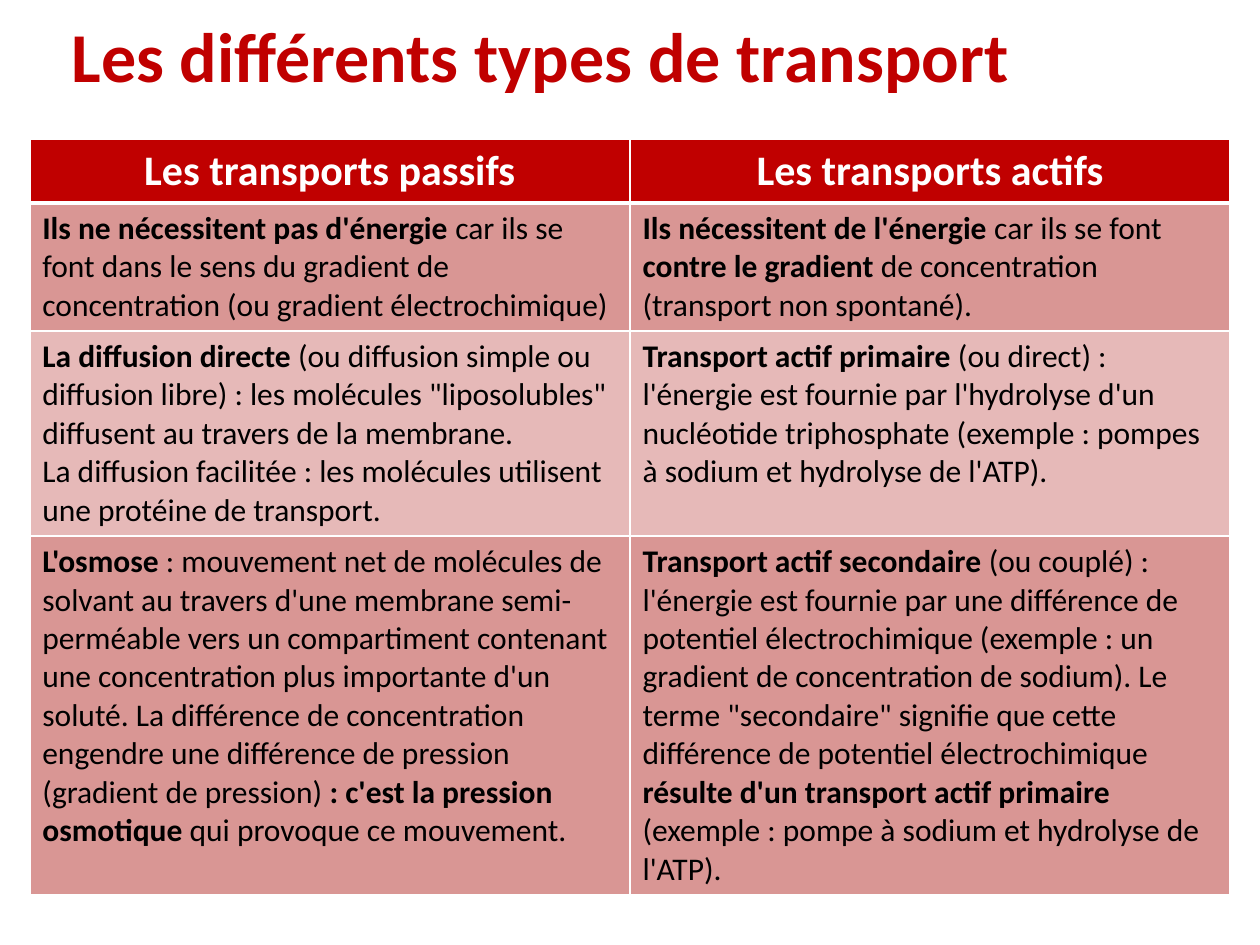
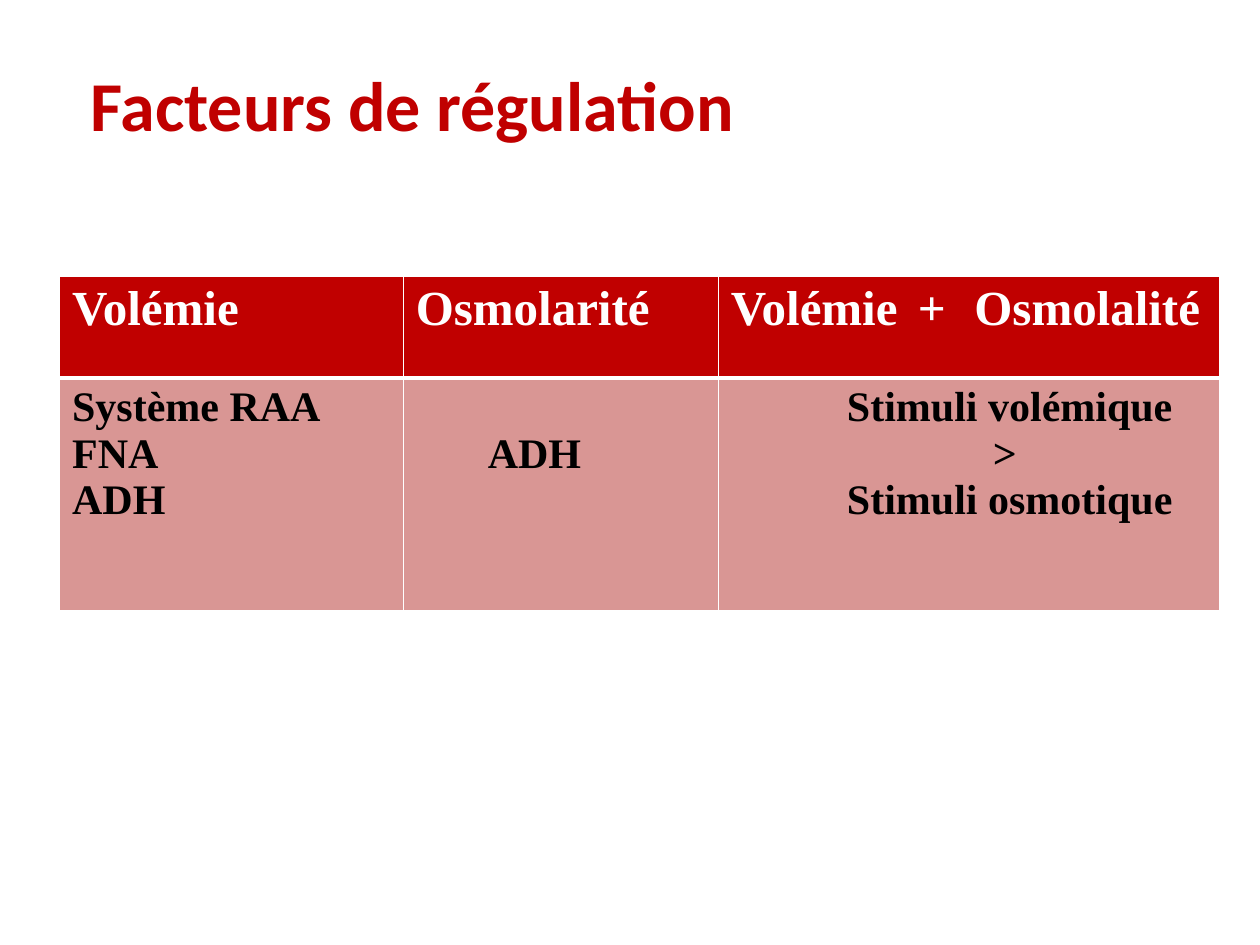
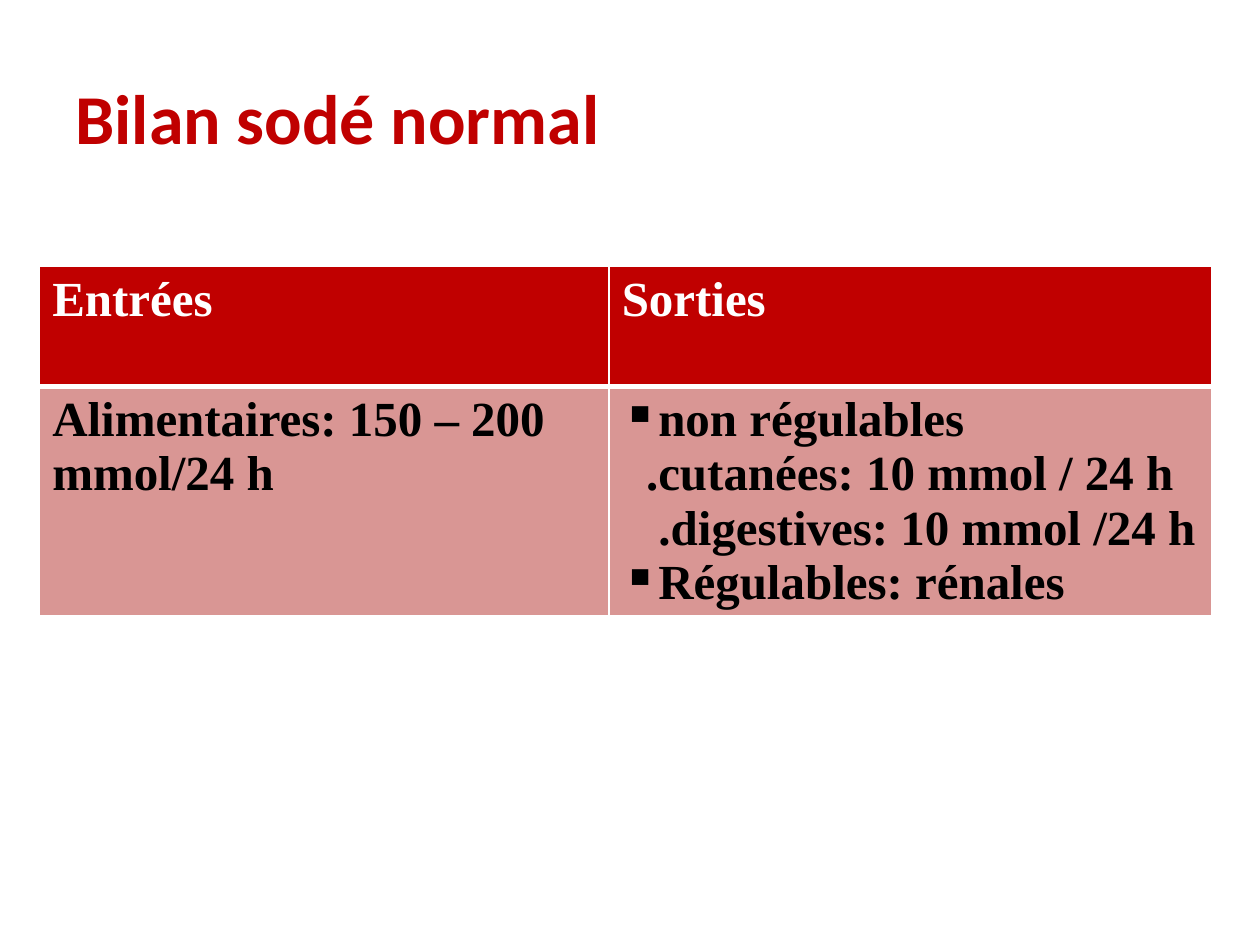
import pptx
import pptx.util
import pptx.dml.color
import pptx.enum.text
import pptx.oxml.ns
import lxml.etree

Cm = pptx.util.Cm
Pt = pptx.util.Pt
COLOURS = {"red": "C00000", "dark band": "D99694", "light band": "E6B9B8",
           "white": "FFFFFF", "black": "000000"}


def write(para, text, font="Calibri", size=18, colour="black", bold=False, indent=0, bullet=None):
    """Write text into a paragraph; parts between asterisks are bold."""
    for index, part in enumerate(text.split("*")):
        if part:
            span = para.add_run()
            span.text = part
            span.font.name = font
            span.font.size = Pt(size)
            span.font.bold = bold or index % 2 == 1
            span.font.color.rgb = pptx.dml.color.RGBColor.from_string(COLOURS[colour])
            if part == " + ":
                span.font._element.set("spc", "467")
    properties = para._p.get_or_add_pPr()
    properties.set("marL", str(Cm(indent)))
    properties.set("indent", str(-Cm(indent) if bullet else 0))
    if bullet:
        mark = lxml.etree.SubElement(properties, pptx.oxml.ns.qn("a:buChar"))
        mark.set("char", bullet)


def draw_borders(cell, row):
    """White cell borders, heavier between the header and the body."""
    properties = cell._tc.get_or_add_tcPr()
    widths = {"lnL": 1, "lnR": 1, "lnT": 3 if row == 1 else 1, "lnB": 3 if row == 0 else 1}
    for position, (side, width) in enumerate(widths.items()):
        line = lxml.etree.Element(pptx.oxml.ns.qn("a:" + side), w=str(Pt(width)))
        fill = lxml.etree.SubElement(line, pptx.oxml.ns.qn("a:solidFill"))
        lxml.etree.SubElement(fill, pptx.oxml.ns.qn("a:srgbClr"), val=COLOURS["white"])
        properties.insert(position, line)


# Content: a cell is a list of lines, a line is (text, format)
plain = {}
pages = [
    {
        "title": "Les différents types de transport",
        "title box": (1.19, 0, 22.86, 2.21),
        "table at": (0.6, 2.8),
        "columns": [12.1, 12.1],
        "rows": [1.25, 2.58, 4.13, 7.21],
        "header": {"size": 24},
        "header alignment": pptx.enum.text.PP_ALIGN.CENTER,
        "body": {"size": 18},
        "cells": [
            [[("Les transports passifs", plain)], [("Les transports actifs", plain)]],
            [[("*Ils ne nécessitent pas d'énergie *car ils se font dans le sens du gradient "
               "de concentration (ou gradient électrochimique)", plain)],
             [("*Ils nécessitent de l'énergie *car ils se font *contre le gradient *"
               "de concentration (transport non spontané).", plain)]],
            [[("*La diffusion directe *(ou diffusion simple ou diffusion libre) : les molécules "
               "\"liposolubles\" diffusent au travers de la membrane.", plain),
              ("La diffusion facilitée : les molécules utilisent une protéine de transport.", plain)],
             [("*Transport actif primaire *(ou direct) : l'énergie est fournie par l'hydrolyse "
               "d'un nucléotide triphosphate (exemple : pompes à sodium et hydrolyse de l'ATP).", plain)]],
            [[("*L'osmose *: mouvement net de molécules de solvant au travers d'une membrane "
               "semi-perméable vers un compartiment contenant une concentration plus importante "
               "d'un soluté. La différence de concentration engendre une différence de pression "
               "(gradient de pression) *: c'est la pression osmotique* qui provoque ce mouvement.", plain)],
             [("*Transport actif secondaire *(ou couplé) : l'énergie est fournie par une différence "
               "de potentiel électrochimique (exemple : un gradient de concentration de sodium). "
               "Le terme \"secondaire\" signifie que cette différence de potentiel électrochimique "
               "*résulte d'un transport actif primaire *(exemple : pompe à sodium et hydrolyse "
               "de l'ATP).", plain)]],
        ],
    },
    {
        "title": "Facteurs de régulation",
        "title box": (1.57, 0.79, 22.86, 2.59),
        "table at": (1.2, 5.56),
        "columns": [6.93, 6.35, 10.11],
        "rows": [2.06, 4.7],
        "header": {"font": "Times New Roman", "size": 28},
        "body": {"font": "Times New Roman", "size": 24, "bold": True},
        "top margins": {(1, 1): 1.07},
        "cells": [
            [[("Volémie", plain)], [("Osmolarité", plain)], [("Volémie* + *Osmolalité", plain)]],
            [[("Système RAA", plain), ("FNA", plain), ("ADH", plain)],
             [("ADH", {"indent": 1.45})],
             [("Stimuli volémique", {"indent": 2.34}),
              (">", {"indent": 5.28}),
              ("Stimuli osmotique", {"indent": 2.34})]],
        ],
    },
    {
        "title": "Bilan sodé normal",
        "title box": (1.27, 0.76, 22.86, 3.18),
        "table at": (0.8, 5.37),
        "columns": [11.48, 12.14],
        "rows": [2.42, 4.62],
        "header": {"font": "Times New Roman", "size": 28},
        "body": {"font": "Times New Roman", "size": 28, "bold": True},
        "cells": [
            [[("Entrées", plain)], [("Sorties", plain)]],
            [[("Alimentaires: 150 – 200 mmol/24 h", plain)],
             [("non régulables", {"indent": 0.58, "bullet": "▪"}),
              (".cutanées: 10 mmol / 24 h", {"indent": 0.49}),
              (".digestives: 10 mmol /24 h", {"indent": 0.74}),
              ("Régulables: rénales", {"indent": 0.34, "bullet": "▪"})]],
        ],
    },
]

deck = pptx.Presentation()
deck.slide_width = Cm(25.4)
deck.slide_height = Cm(19.05)

for content in pages:
    page = deck.slides.add_slide(deck.slide_layouts[5])

    # Title
    title = page.shapes.title
    title.left, title.top, title.width, title.height = map(Cm, content["title box"])
    title.text_frame.vertical_anchor = pptx.enum.text.MSO_ANCHOR.MIDDLE
    title.text_frame.paragraphs[0].alignment = pptx.enum.text.PP_ALIGN.LEFT
    write(title.text_frame.paragraphs[0], content["title"], size=40, colour="red", bold=True)

    # Table grid
    columns, rows = content["columns"], content["rows"]
    left, top = content["table at"]
    table = page.shapes.add_table(len(rows), len(columns), Cm(left), Cm(top),
                                  Cm(sum(columns)), Cm(sum(rows))).table
    table.horz_banding = False
    for column, width in zip(table.columns, columns):
        column.width = Cm(width)
    for row, height in zip(table.rows, rows):
        row.height = Cm(height)

    # Cells: red header, then alternating bands
    for row, row_cells in enumerate(content["cells"]):
        if row == 0:
            band = "red"
            style = {"colour": "white", "bold": True, **content["header"]}
        else:
            band = "dark band" if row % 2 else "light band"
            style = content["body"]
        for column, lines in enumerate(row_cells):
            cell = table.cell(row, column)
            cell.fill.solid()
            cell.fill.fore_color.rgb = pptx.dml.color.RGBColor.from_string(COLOURS[band])
            cell.margin_top = Cm(content.get("top margins", {}).get((row, column), 0.13))
            draw_borders(cell, row)
            for number, (text, line_format) in enumerate(lines):
                para = cell.text_frame.add_paragraph() if number else cell.text_frame.paragraphs[0]
                if row == 0:
                    para.alignment = content.get("header alignment")
                write(para, text, **style, **line_format)

deck.save("out.pptx")
